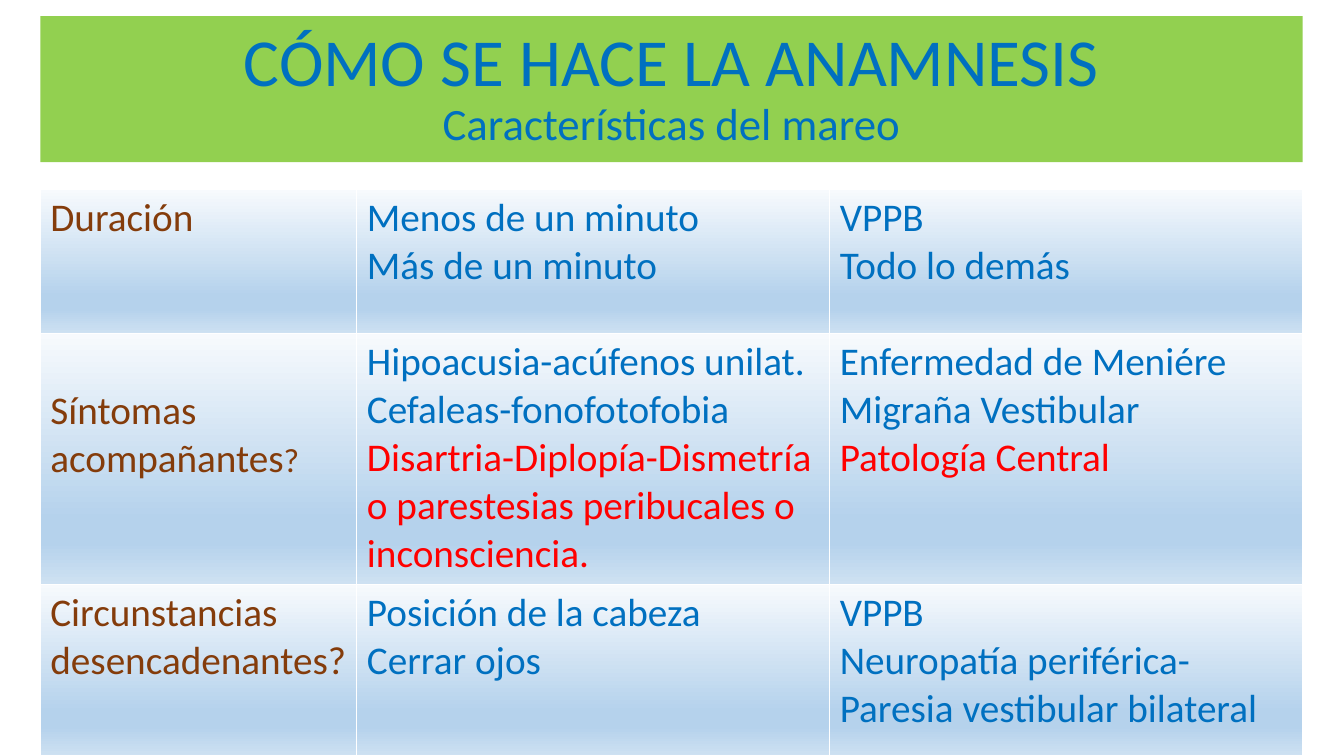
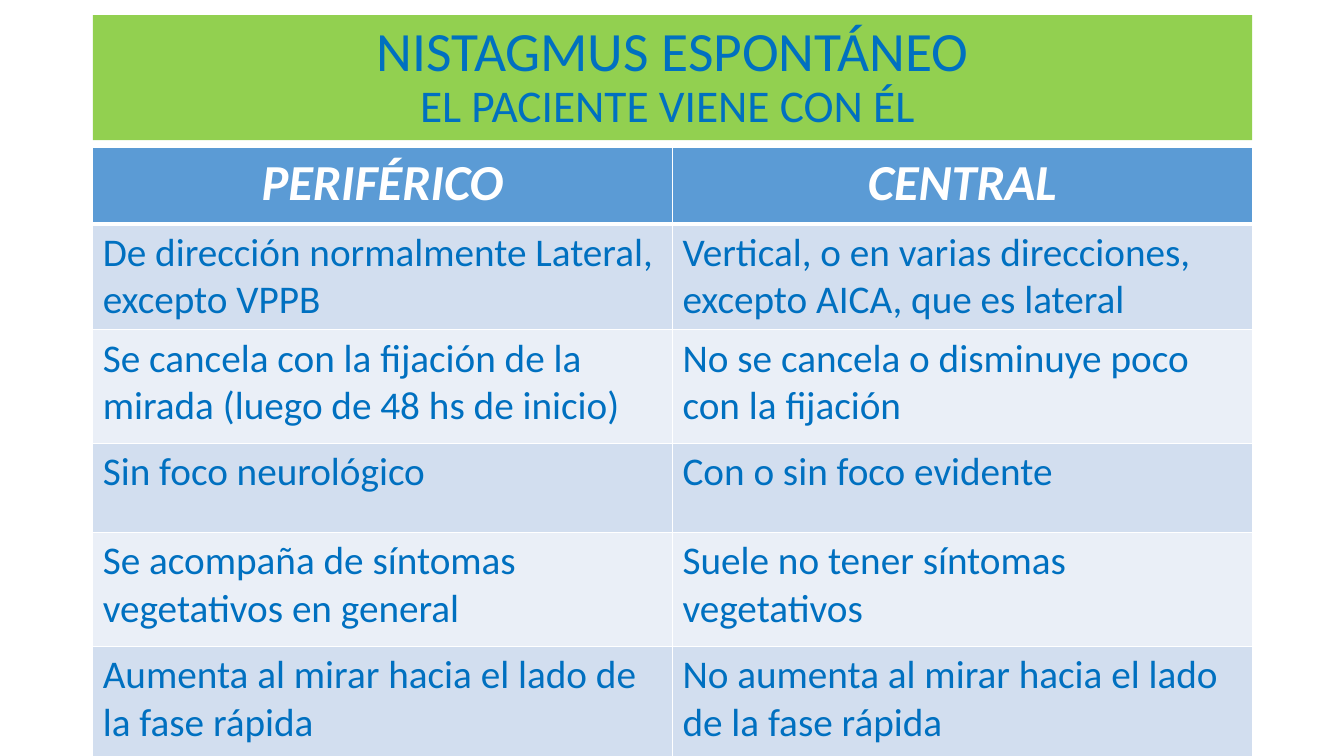
from dataclasses import dataclass
from lxml.etree import SubElement
from pptx import Presentation
from pptx.dml.color import RGBColor
from pptx.enum.text import MSO_ANCHOR, MSO_AUTO_SIZE, PP_ALIGN
from pptx.oxml.ns import qn
from pptx.util import Inches, Pt


@dataclass(frozen=True)
class Theme:
    font: str = "Calibri"
    band: str = "92D050"
    text: str = "0070C0"
    label: str = "843C0B"
    alert: str = "FF0000"
    white: str = "FFFFFF"
    header: str = "5B9BD5"
    stripes: tuple = ("D2DEEF", "EAEFF7")
    gradient: tuple = ((0, "F7FAFD"), (74, "B5D2EC"), (83, "B5D2EC"), (100, "CEE1F2"))
    body_size: float = 28
    small_size: float = 24
    header_size: float = 36
    thin: float = 1
    thick: float = 3


THEME = Theme()


@dataclass(frozen=True)
class Run:
    """A piece of text that may differ in size or colour from its paragraph."""
    text: str
    size: float = None
    color: str = None


CHARACTERISTICS = [
    [
        [Run("Duración", color=THEME.label)],
        ["Menos de un minuto", "Más de un minuto"],
        ["VPPB", "Todo lo demás"],
    ],
    [
        [[Run("Síntomas acompañantes", color=THEME.label),
          Run("?", THEME.small_size, THEME.label)]],
        ["Hipoacusia-acúfenos unilat.", "Cefaleas-fonofotofobia",
         Run("Disartria-Diplopía-Dismetría o parestesias peribucales o inconsciencia.",
             color=THEME.alert)],
        ["Enfermedad de Meniére", "Migraña Vestibular",
         Run("Patología Central", color=THEME.alert)],
    ],
    [
        [Run("Circunstancias desencadenantes?", color=THEME.label)],
        ["Posición de la cabeza", "Cerrar ojos"],
        ["VPPB", "Neuropatía periférica-Paresia vestibular bilateral"],
    ],
]

NYSTAGMUS = [
    ("PERIFÉRICO", "CENTRAL"),
    ("De dirección normalmente Lateral, excepto VPPB",
     "Vertical, o en varias direcciones, excepto AICA, que es lateral"),
    ("Se cancela con la fijación de la mirada (luego de 48 hs de inicio)",
     "No se cancela o disminuye poco con la fijación"),
    ("Sin foco neurológico", "Con o sin foco evidente"),
    ("Se acompaña de síntomas vegetativos en general",
     "Suele no tener síntomas vegetativos"),
    ("Aumenta al mirar hacia el lado de la fase rápida",
     "No aumenta al mirar hacia el lado de la fase rápida"),
]


def write_text(text_frame, paragraphs, *, size=THEME.body_size, color=THEME.text,
               bold=False, italic=False, align=PP_ALIGN.LEFT, line_spacing=None):
    """Each paragraph is a string, a Run or a list of Runs; a Run "\\n" breaks the line."""
    for index, content in enumerate(paragraphs):
        paragraph = text_frame.add_paragraph() if index else text_frame.paragraphs[0]
        paragraph.alignment = align
        paragraph.line_spacing = line_spacing
        for piece in content if isinstance(content, list) else [content]:
            piece = Run(piece) if isinstance(piece, str) else piece
            if piece.text == "\n":
                paragraph.add_line_break()
                continue
            run = paragraph.add_run()
            run.text = piece.text
            font = run.font
            font.name = THEME.font
            font.size = Pt(piece.size or size)
            font.bold, font.italic = bold, italic
            font.color.rgb = RGBColor.from_string(piece.color or color)


def add_titled_slide(presentation, box, title, subtitle):
    slide = presentation.slides.add_slide(presentation.slide_layouts[5])
    shape = slide.shapes.title
    shape.left, shape.top, shape.width, shape.height = map(Inches, box)
    shape.fill.solid()
    shape.fill.fore_color.rgb = RGBColor.from_string(THEME.band)
    frame = shape.text_frame
    frame.word_wrap = True
    frame.auto_size = MSO_AUTO_SIZE.NONE
    frame.vertical_anchor = MSO_ANCHOR.MIDDLE
    write_text(frame, [[title, Run("\n"), subtitle]],
               align=PP_ALIGN.CENTER, line_spacing=0.9)
    return slide


def add_plain_table(slide, left, top, widths, heights):
    frame = slide.shapes.add_table(
        len(heights), len(widths), Inches(left), Inches(top),
        Inches(sum(widths)), Inches(sum(heights)))
    table = frame.table
    table.first_row = table.horz_banding = False
    for column, width in zip(table.columns, widths):
        column.width = Inches(width)
    for row, height in zip(table.rows, heights):
        row.height = Inches(height)
    return table


def add_color(parent, color):
    SubElement(parent, qn("a:srgbClr"), val=color)


def set_borders(cell, top=THEME.thin, bottom=THEME.thin):
    """Must run before the cell is filled, to keep the order of the XML valid."""
    properties = cell._tc.get_or_add_tcPr()
    for side, width in zip("LRTB", (THEME.thin, THEME.thin, top, bottom)):
        line = SubElement(properties, qn(f"a:ln{side}"), w=str(Pt(width)))
        add_color(SubElement(line, qn("a:solidFill")), THEME.white)


def fill_solid(cell, color):
    cell.fill.solid()
    cell.fill.fore_color.rgb = RGBColor.from_string(color)


def fill_gradient(cell):
    gradient = SubElement(cell._tc.get_or_add_tcPr(), qn("a:gradFill"), rotWithShape="1")
    stops = SubElement(gradient, qn("a:gsLst"))
    for percent, color in THEME.gradient:
        add_color(SubElement(stops, qn("a:gs"), pos=str(percent * 1000)), color)
    SubElement(gradient, qn("a:lin"), ang="5400000", scaled="0")


def build_characteristics(presentation):
    slide = add_titled_slide(
        presentation, (0.4, 0.16, 12.52, 1.45),
        Run("CÓMO SE HACE LA ANAMNESIS", 48), Run("Características del mareo", 32))
    table = add_plain_table(slide, 0.4, 1.88, (3.14, 4.69, 4.69), (1.43, 2.49, 1.7))
    for row, contents in enumerate(CHARACTERISTICS):
        for column, paragraphs in enumerate(contents):
            cell = table.cell(row, column)
            set_borders(cell)
            fill_gradient(cell)
            write_text(cell.text_frame, paragraphs)
    table.cell(1, 0).margin_top = Inches(0.53)


def build_nystagmus(presentation):
    slide = add_titled_slide(
        presentation, (0.92, 0.15, 11.5, 1.24),
        Run("NISTAGMUS ESPONTÁNEO", 39.6), Run("EL PACIENTE VIENE CON ÉL ", 32.4))
    table = add_plain_table(slide, 0.92, 1.46, (5.75, 5.75),
                            (0.76, 1.05, 1.13, 0.88, 1.13, 1.13))
    for row, texts in enumerate(NYSTAGMUS):
        for column, text in enumerate(texts):
            cell = table.cell(row, column)
            set_borders(cell, top=THEME.thick if row == 1 else THEME.thin,
                        bottom=THEME.thick if row == 0 else THEME.thin)
            if row == 0:
                fill_solid(cell, THEME.header)
                write_text(cell.text_frame, [text], size=THEME.header_size,
                           color=THEME.white, bold=True, italic=True,
                           align=PP_ALIGN.CENTER)
            else:
                fill_solid(cell, THEME.stripes[(row - 1) % 2])
                write_text(cell.text_frame, [text])


def main():
    presentation = Presentation()
    presentation.slide_width = Inches(13.33)
    presentation.slide_height = Inches(7.5)
    build_characteristics(presentation)
    build_nystagmus(presentation)
    presentation.save("out.pptx")


if __name__ == "__main__":
    main()
